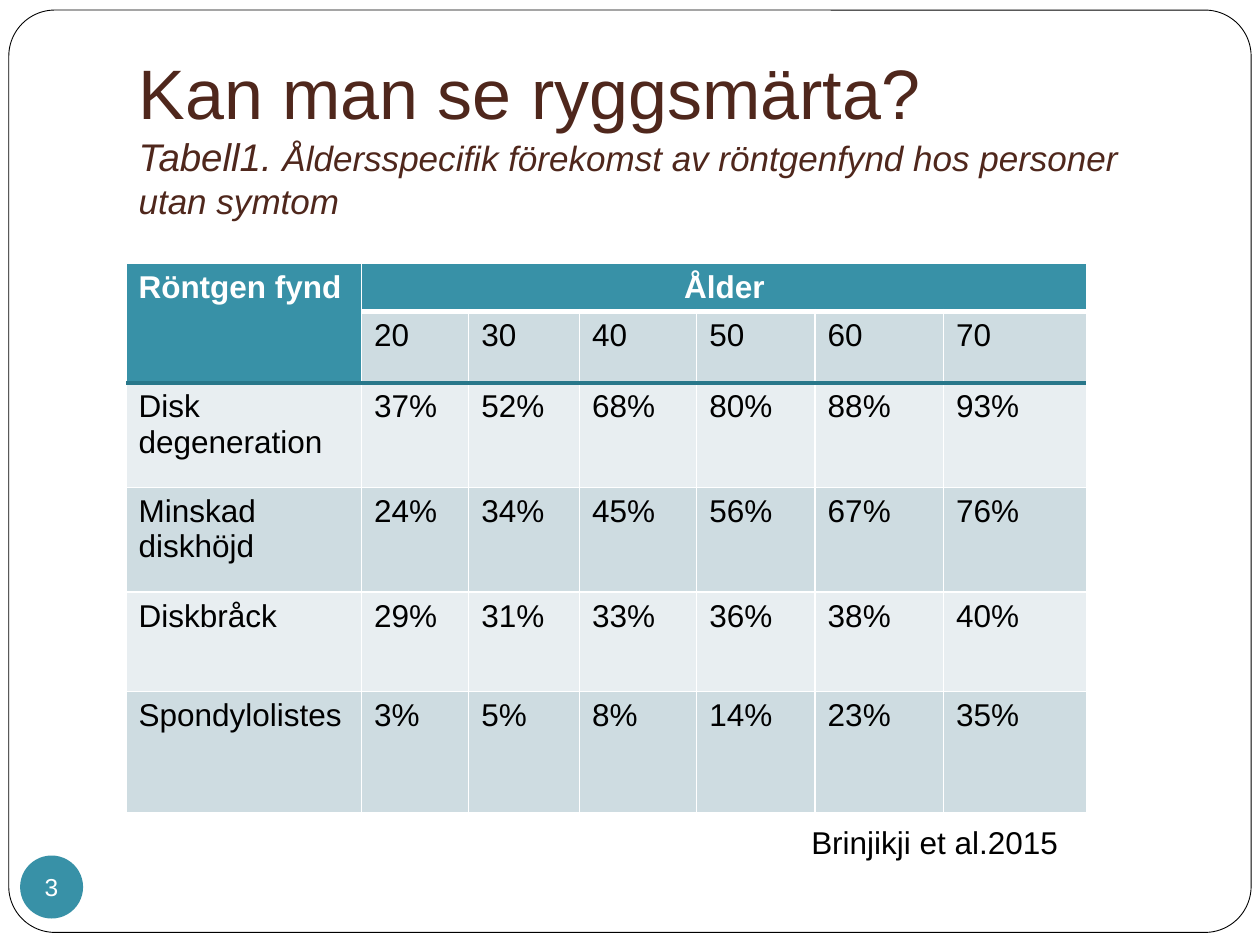
from dataclasses import dataclass

import pptx
import pptx.dml.color
import pptx.enum.shapes
import pptx.enum.text
import pptx.oxml.ns
import pptx.util
from lxml import etree

Inches = pptx.util.Inches
Pt = pptx.util.Pt
RGB = pptx.dml.color.RGBColor.from_string
ALIGN = pptx.enum.text.PP_ALIGN
ANCHOR = pptx.enum.text.MSO_ANCHOR
SHAPE = pptx.enum.shapes.MSO_SHAPE
qn = pptx.oxml.ns.qn


@dataclass(frozen=True)
class Theme:
    font: str = "Arial"
    white: str = "FFFFFF"
    black: str = "000000"
    title: str = "4F271C"
    accent: str = "3891A7"
    rule: str = "28778A"
    band_dark: str = "CEDCE1"
    band_light: str = "E8EEF1"
    title_size: int = 40
    label_size: int = 22
    caption_size: int = 20
    text_size: int = 18
    number_size: int = 14


theme = Theme()


def add_text(p, text, size=theme.text_size, color=theme.black, bold=False,
             italic=False, align=ALIGN.LEFT):
    p.alignment = align
    r = p.add_run()
    r.text = text
    r.font.name = theme.font
    r.font.size = Pt(size)
    r.font.color.rgb = RGB(color)
    r.font.bold = bold
    r.font.italic = italic


def set_borders(cell, **widths):
    """Draw white cell borders; widths maps L, R, T, B to points."""
    tcPr = cell._tc.get_or_add_tcPr()
    for side, width in widths.items():
        ln = etree.SubElement(tcPr, qn(f"a:ln{side}"), w=str(Pt(width)))
        fill = etree.SubElement(ln, qn("a:solidFill"))
        etree.SubElement(fill, qn("a:srgbClr"), val=theme.white)


prs = pptx.Presentation()
prs.slide_width = Inches(10)
prs.slide_height = Inches(7.5)
s = prs.slides.add_slide(prs.slide_layouts[5])

# Rounded frame, placed behind the title
frame = s.shapes.add_shape(SHAPE.ROUNDED_RECTANGLE, Inches(0.07), Inches(0.08),
                           Inches(9.86), Inches(7.32))
frame.adjustments[0] = 0.05
frame.shadow.inherit = False
frame.fill.solid()
frame.fill.fore_color.rgb = RGB(theme.white)
frame.line.color.rgb = RGB(theme.black)
frame.line.width = Pt(0.5)
s.shapes.title._element.addprevious(frame._element)

# Title with table caption
title = s.shapes.title
title.left, title.top = Inches(1), Inches(0.3)
title.width, title.height = Inches(8.5), Inches(1.56)
tf = title.text_frame
tf.auto_size = pptx.enum.text.MSO_AUTO_SIZE.NONE
tf.vertical_anchor = ANCHOR.BOTTOM
tf.margin_bottom = Inches(0.1)
p = tf.paragraphs[0]
add_text(p, "Kan man se ryggsmärta?", size=theme.title_size, color=theme.title)
p.add_line_break()
add_text(p, "Tabell1. ", size=theme.label_size, color=theme.title, italic=True)
add_text(p, "Åldersspecifik förekomst av röntgenfynd hos personer utan symtom",
         size=theme.caption_size, color=theme.title, italic=True)

# Slide number badge
badge = s.shapes.add_shape(SHAPE.OVAL, Inches(0.16), Inches(6.79),
                           Inches(0.5), Inches(0.5))
badge.shadow.inherit = False
badge.fill.solid()
badge.fill.fore_color.rgb = RGB(theme.accent)
badge.line.fill.background()
tf = badge.text_frame
tf.word_wrap = False
tf.vertical_anchor = ANCHOR.MIDDLE
tf.margin_left = tf.margin_right = tf.margin_top = tf.margin_bottom = 0
add_text(tf.paragraphs[0], "3", size=theme.number_size, color=theme.white,
         align=ALIGN.CENTER)

# Findings by age
rows = [
    ["Röntgen fynd", "Ålder", "", "", "", "", ""],
    ["", "20", "30", "40", "50", "60", "70"],
    ["Disk degeneration", "37%", "52%", "68%", "80%", "88%", "93%"],
    ["Minskad diskhöjd", "24%", "34%", "45%", "56%", "67%", "76%"],
    ["Diskbråck", "29%", "31%", "33%", "36%", "38%", "40%"],
    ["Spondylolistes", "3%", "5%", "8%", "14%", "23%", "35%"],
]
col_widths = [1.87, 0.85, 0.88, 0.93, 0.94, 1.02, 1.14]
row_heights = [0.27, 0.57, 0.83, 0.83, 0.79, 0.96]
table = s.shapes.add_table(len(rows), len(col_widths), Inches(1), Inches(2.09),
                           Inches(sum(col_widths)), Inches(sum(row_heights))).table
for column, width in zip(table.columns, col_widths):
    column.width = Inches(width)
for row, height in zip(table.rows, row_heights):
    row.height = Inches(height)

for i, row in enumerate(rows):
    for j, text in enumerate(row):
        cell = table.cell(i, j)
        header = i == 0 or (i == 1 and j == 0)
        set_borders(cell, L=1, R=1, T=3 if i == 1 else 1, B=3 if i == 0 else 1)
        band = theme.band_dark if i % 2 else theme.band_light
        cell.fill.solid()
        cell.fill.fore_color.rgb = RGB(theme.accent if header else band)
        if text:
            add_text(cell.text_frame.paragraphs[0], text, bold=header,
                     color=theme.white if header else theme.black,
                     align=ALIGN.CENTER if text == "Ålder" else ALIGN.LEFT)
table.cell(0, 0).merge(table.cell(1, 0))
table.cell(0, 1).merge(table.cell(0, 6))
table.cell(0, 1).vertical_anchor = ANCHOR.MIDDLE

# Rule under the table header
rule = s.shapes.add_connector(pptx.enum.shapes.MSO_CONNECTOR.STRAIGHT, Inches(1),
                              Inches(3.04), Inches(8.62), Inches(3.04))
rule.line.color.rgb = RGB(theme.rule)
rule.line.width = Pt(2.25)
etree.SubElement(rule._element.spPr, qn("a:effectLst"))

# Reference
reference = s.shapes.add_textbox(Inches(6.34), Inches(6.48), Inches(2.68), Inches(0.4))
tf = reference.text_frame
tf.word_wrap = True
tf.auto_size = pptx.enum.text.MSO_AUTO_SIZE.SHAPE_TO_FIT_TEXT
add_text(tf.paragraphs[0], "Brinjikji et al.2015")

prs.save("out.pptx")
